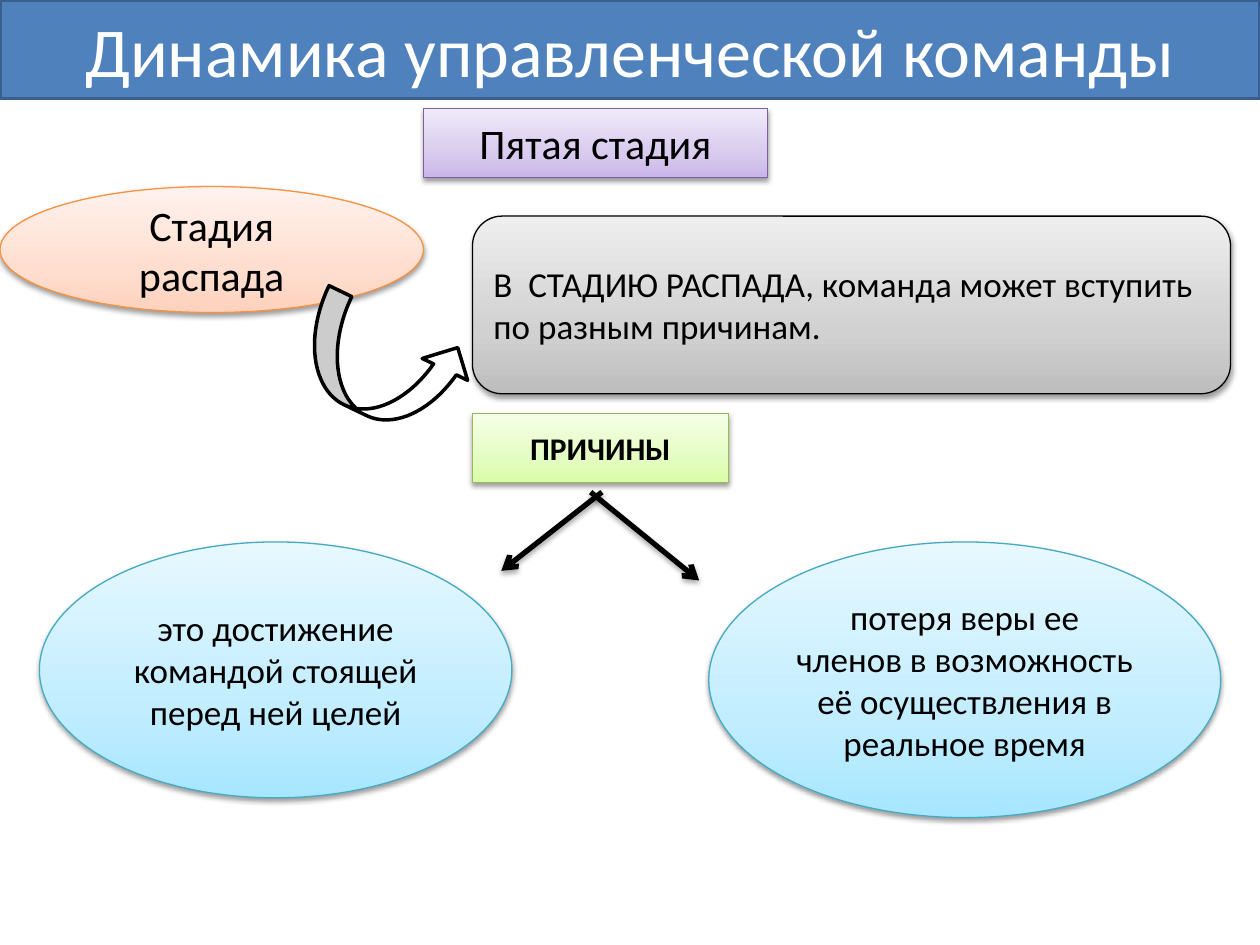
from pptx import Presentation
from pptx.util import Pt
from pptx.dml.color import RGBColor
from pptx.enum.shapes import MSO_SHAPE, MSO_CONNECTOR
from pptx.enum.text import PP_ALIGN, MSO_ANCHOR
from pptx.oxml import parse_xml
from pptx.oxml.ns import nsdecls
from copy import deepcopy

BLACK = "000000"
VIOLET = ("C9B5E8", "D8CBEE", "F0EAF9")
ORANGE = ("FFD2BD", "FFDED0", "FFF2ED")
GRAY = ("BDBDBD", "D1D1D1", "EEEEEE")
BLUE = ("A7E6FF", "C1EDFF", "E7F8FF")
GREEN = ("DAFDA7", "E4FCC2", "F5FFE7")


def paint(part, color):
    part.rgb = RGBColor.from_string(color)


def shade(item, alpha, dist):
    item._element.spPr.append(parse_xml(
        f'<a:effectLst {nsdecls("a")}>'
        f'<a:outerShdw blurRad="{Pt(3.1)}" dist="{Pt(dist)}" dir="5400000" rotWithShape="0">'
        f'<a:srgbClr val="{BLACK}"><a:alpha val="{alpha * 1000}"/></a:srgbClr>'
        '</a:outerShdw></a:effectLst>'))


def blend(fill, colors):
    fill.gradient()
    fill.gradient_angle = 90
    stops = fill._fill._gradFill.gsLst
    stops.append(deepcopy(stops[-1]))
    for stop, spot, color in zip(fill.gradient_stops, (0, 0.35, 1), colors):
        stop.position = spot
        paint(stop.color, color)


def draw(slide, kind, box, fill, edge, width):
    shape = slide.shapes.add_shape(kind, *map(Pt, box))
    if isinstance(fill, str):
        shape.fill.solid()
        paint(shape.fill.fore_color, fill)
    else:
        blend(shape.fill, fill)
    paint(shape.line.color, edge)
    shape.line.width = Pt(width)
    if isinstance(fill, str):
        shape.shadow.inherit = False
    else:
        shade(shape, 38, 1.6)
    return shape


def write(shape, text, size, color=BLACK, align=PP_ALIGN.CENTER, bold=False):
    frame = shape.text_frame
    frame.word_wrap = True
    frame.vertical_anchor = MSO_ANCHOR.MIDDLE
    para = frame.paragraphs[0]
    para.alignment = align
    run = para.add_run()
    run.text = text
    run.font.name = "Calibri"
    run.font.size = Pt(size)
    run.font.bold = bold
    paint(run.font.color, color)


def card(slide, kind, box, fill, edge, text, size, **style):
    write(draw(slide, kind, box, fill, edge, 0.75), text, size, **style)


def arrow(slide, start, end):
    line = slide.shapes.add_connector(MSO_CONNECTOR.STRAIGHT, *map(Pt, start + end))
    paint(line.line.color, BLACK)
    line.line.width = Pt(3)
    line.line._get_or_add_ln().append(
        parse_xml(f'<a:tailEnd {nsdecls("a")} type="arrow"/>'))
    shade(line, 35, 1.8)


def header(slide, x, y, w, h):
    bar = draw(slide, MSO_SHAPE.RECTANGLE, (x, y, w, h), "4F81BD", "3A5F8C", 2)
    write(bar, "Динамика управленческой команды", 40, "FFFFFF")


def stage(slide, x, y, w, h):
    card(slide, MSO_SHAPE.RECTANGLE, (x + 242, y, 196.5, 39.5), VIOLET, "7D60A0",
         "Пятая стадия", 24)
    card(slide, MSO_SHAPE.OVAL, (x, y + 44.6, 242, 72), ORANGE, "F69240",
         "Стадия распада", 24)
    card(slide, MSO_SHAPE.ROUNDED_RECTANGLE, (x + 270, y + h - 101.5, w - 270, 101.5),
         GRAY, BLACK, "В  СТАДИЮ РАСПАДА, команда может вступить по разным причинам.",
         20, align=PP_ALIGN.LEFT)
    curve = draw(slide, MSO_SHAPE.CURVED_RIGHT_ARROW, (x + 190, y + 100, 57.6, 96),
                 "FFFFFF", BLACK, 2)
    curve.rotation = 295.7


def causes(slide, x, y, w, h):
    top = y + 73.5
    card(slide, MSO_SHAPE.OVAL, (x, top, 270, 146.2), BLUE, "46AAC5",
         "это достижение командой стоящей перед ней целей", 20)
    card(slide, MSO_SHAPE.RECTANGLE, (x + 247.5, y, 146.2, 39.5), GREEN, "98B955",
         "ПРИЧИНЫ", 18, bold=True)
    card(slide, MSO_SHAPE.OVAL, (x + w - 292.5, top, 292.5, h - 73.5), BLUE, "46AAC5",
         "потеря веры ее членов в возможность её осуществления в реальное время", 20)
    arrow(slide, (x + 315, y + 45), (x + 377, y + 95.5))
    arrow(slide, (x + 321.5, y + 45), (x + 264, y + 90))


def main():
    deck = Presentation()
    deck.slide_width, deck.slide_height = Pt(720), Pt(540)
    slide = deck.slides.add_slide(deck.slide_layouts[6])
    header(slide, 0, 0, 720, 56.25)
    stage(slide, 0, 62, 703.2, 163)
    causes(slide, 22.5, 236.2, 675, 231)
    deck.save("out.pptx")


if __name__ == "__main__":
    main()
